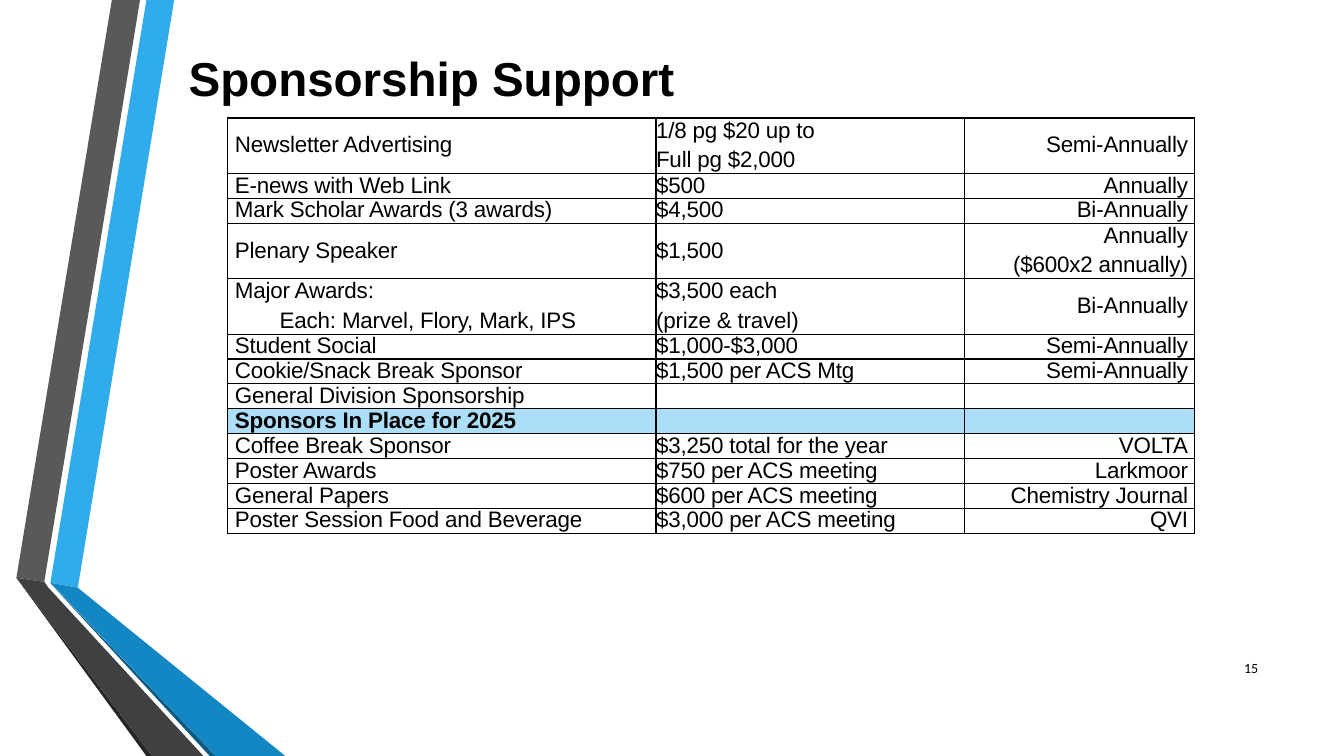
from lxml import etree
from pptx import Presentation
from pptx.dml.color import RGBColor
from pptx.enum import text as t
from pptx.oxml import ns
from pptx.util import Pt

BLACK = RGBColor(0x00, 0x00, 0x00)
LIGHT_GRAY = RGBColor(0x59, 0x59, 0x59)
DARK_GRAY = RGBColor(0x40, 0x40, 0x40)
GRAY_EDGE = RGBColor(0x26, 0x26, 0x26)
LIGHT_BLUE = RGBColor(0x30, 0xAC, 0xEC)
DARK_BLUE = RGBColor(0x12, 0x87, 0xC3)
BLUE_EDGE = RGBColor(0x0C, 0x5A, 0x82)
HEADING_FILL = RGBColor(0xAC, 0xDE, 0xF7)

LEFT, RIGHT = t.PP_ALIGN.LEFT, t.PP_ALIGN.RIGHT
MIDDLE = t.MSO_ANCHOR.MIDDLE


def write(paragraph, content, size=16, font="Arial", bold=False, align=LEFT, spacing=0):
    """Fill a paragraph; spacing is the tracking in hundredths of a point."""
    paragraph.alignment = align
    run = paragraph.add_run()
    run.text = content
    run.font.size = Pt(size)
    run.font.name = font
    run.font.bold = bold
    run.font.color.rgb = BLACK
    run.font._element.set("spc", str(spacing))


def add_borders(cell):
    properties = cell._tc.get_or_add_tcPr()
    for side in ("a:lnL", "a:lnR", "a:lnT", "a:lnB"):
        line = etree.SubElement(properties, ns.qn(side), w=str(Pt(1)))
        fill = etree.SubElement(line, ns.qn("a:solidFill"))
        etree.SubElement(fill, ns.qn("a:srgbClr"), val=str(BLACK))


presentation = Presentation()
presentation.slide_width = Pt(960)
presentation.slide_height = Pt(540)
slide = presentation.slides.add_slide(presentation.slide_layouts[5])

# Folded ribbons along the left edge
ribbons = [
    (LIGHT_BLUE, [(36, 416.2), (55.6, 419.8), (124.4, 0), (104.6, 0)]),
    (LIGHT_GRAY, [(100, 0), (79.9, 0), (11.7, 412.7), (31.6, 415.6)]),
    (GRAY_EDGE, [(11.7, 412.7), (104.6, 540), (108.7, 540)]),
    (BLUE_EDGE, [(36, 416.6), (149.8, 540), (154.1, 540)]),
    (DARK_BLUE, [(36, 416.2), (154.1, 540), (203.8, 540), (55.6, 419.8)]),
    (DARK_GRAY, [(145.3, 540), (34.6, 419.8), (31.6, 415.6), (11.7, 412.7), (108.7, 540)]),
]
for color, corners in ribbons:
    points = [(Pt(x), Pt(y)) for x, y in corners]
    builder = slide.shapes.build_freeform(*points[0])
    builder.add_line_segments(points[1:], close=True)
    ribbon = builder.convert_to_shape()
    ribbon.shadow.inherit = False
    ribbon.fill.solid()
    ribbon.fill.fore_color.rgb = color
    ribbon.line.fill.background()

# Title
title = slide.shapes.title
title.left, title.top, title.width, title.height = Pt(127.5), Pt(27.4), Pt(588), Pt(47)
title.text_frame.auto_size = t.MSO_AUTO_SIZE.NONE
title.text_frame.vertical_anchor = t.MSO_ANCHOR.TOP
title.text_frame.margin_top = Pt(7.6)
title.text_frame.margin_bottom = 0
write(title.text_frame.paragraphs[0], "Sponsorship Support", size=34, bold=True)

# Sponsorship table: a line break in a cell starts a new paragraph
rows = [
    ("Newsletter Advertising", "1/8 pg $20 up to\nFull pg $2,000", "Semi-Annually"),
    ("E-news with Web Link", "$500", "Annually"),
    ("Mark Scholar Awards (3 awards)", "$4,500", "Bi-Annually"),
    ("Plenary Speaker", "$1,500", "Annually\n($600x2 annually)"),
    ("Major Awards:\nEach: Marvel, Flory, Mark, IPS", "$3,500 each\n(prize & travel)", "Bi-Annually"),
    ("Student Social", "$1,000-$3,000", "Semi-Annually"),
    ("Cookie/Snack Break Sponsor", "$1,500 per ACS Mtg", "Semi-Annually"),
    ("General Division Sponsorship", "", ""),
    ("Sponsors In Place for 2025", "", ""),
    ("Coffee Break Sponsor", "$3,250 total for the year", "VOLTA"),
    ("Poster Awards", "$750 per ACS meeting", "Larkmoor"),
    ("General Papers", "$600 per ACS meeting", "Chemistry Journal"),
    ("Poster Session Food and Beverage", "$3,000 per ACS meeting", "QVI"),
]
HEADING_ROW = 8
column_widths = [306, 220.4, 164.2]
row_heights = [39.6 if any("\n" in entry for entry in row) else 17.8 for row in rows]

table = slide.shapes.add_table(
    len(rows), len(column_widths), Pt(162.6), Pt(84.3),
    Pt(sum(column_widths)), Pt(sum(row_heights))).table
table.first_row = False
table.horz_banding = False
for column, width in zip(table.columns, column_widths):
    column.width = Pt(width)

for row_index, row in enumerate(rows):
    table.rows[row_index].height = Pt(row_heights[row_index])
    for column_index, entry in enumerate(row):
        cell = table.cell(row_index, column_index)
        cell.vertical_anchor = MIDDLE
        cell.margin_top = cell.margin_bottom = 0
        cell.margin_left = Pt(5.2 if column_index == 0 else 0)
        cell.margin_right = Pt(4.5 if column_index == 2 else 0)
        add_borders(cell)
        if row_index == HEADING_ROW:
            cell.fill.solid()
            cell.fill.fore_color.rgb = HEADING_FILL
        else:
            cell.fill.background()
        if not entry:
            etree.SubElement(cell.text_frame.paragraphs[0]._p, ns.qn("a:endParaRPr"), sz="1000")
            continue
        for line_index, content in enumerate(entry.split("\n")):
            paragraph = cell.text_frame.add_paragraph() if line_index else cell.text_frame.paragraphs[0]
            paragraph.line_spacing = 0.96
            paragraph.space_before = paragraph.space_after = Pt(2)
            if line_index and column_index == 0:
                paragraph._p.get_or_add_pPr().set("marL", str(Pt(32)))
            write(paragraph, content, bold=row_index == HEADING_ROW,
                  align=RIGHT if column_index == 2 else LEFT, spacing=-10)

# Slide number
number = slide.shapes.add_textbox(Pt(862.6), Pt(463), Pt(43.2), Pt(28.8))
number.text_frame.word_wrap = True
number.text_frame.vertical_anchor = MIDDLE
write(number.text_frame.paragraphs[0], "15", size=10, font="Calibri", align=RIGHT)

presentation.save("out.pptx")
